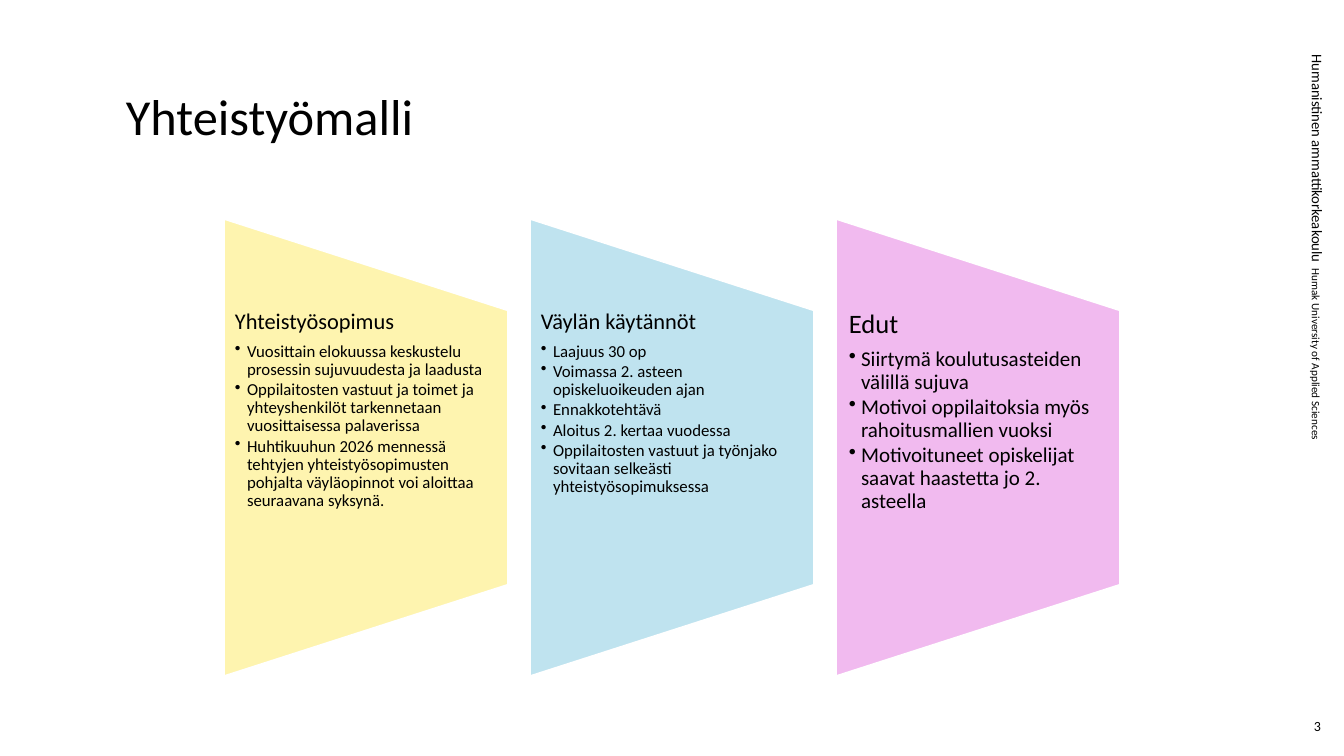
"""Build the Yhteistyömalli slide with three tapered topic panels."""
from lxml import etree
from pptx import Presentation
from pptx.dml.color import RGBColor
from pptx.enum.shapes import MSO_SHAPE
from pptx.enum.text import MSO_ANCHOR, PP_ALIGN
from pptx.oxml.ns import qn
from pptx.util import Inches, Pt

TAPERED = MSO_SHAPE.FLOWCHART_MANUAL_OPERATION
MIDDLE = MSO_ANCHOR.MIDDLE
RIGHT = PP_ALIGN.RIGHT
COLORS = {
    "text": "000000",
    "outline": "FFFFFF",
    "yellow": "FEF4AF",
    "blue": "BFE3EF",
    "pink": "F1BAEF",
}
PANELS = [
    ("Yhteistyösopimus", "yellow", 16, 12, 0.11, [
        "Vuosittain elokuussa keskustelu prosessin sujuvuudesta ja laadusta",
        "Oppilaitosten vastuut ja toimet ja yhteyshenkilöt tarkennetaan "
        "vuosittaisessa palaverissa",
        "Huhtikuuhun 2026 mennessä tehtyjen yhteistyösopimusten pohjalta "
        "väyläopinnot voi aloittaa seuraavana syksynä.",
    ]),
    ("Väylän käytännöt", "blue", 16, 12, 0.11, [
        "Laajuus 30 op",
        "Voimassa 2. asteen opiskeluoikeuden ajan",
        "Ennakkotehtävä",
        "Aloitus 2. kertaa vuodessa",
        "Oppilaitosten vastuut ja työnjako sovitaan selkeästi "
        "yhteistyösopimuksessa",
    ]),
    ("Edut", "pink", 19, 15, 0.13, [
        "Siirtymä koulutusasteiden välillä sujuva",
        "Motivoi oppilaitoksia myös rahoitusmallien vuoksi",
        "Motivoituneet opiskelijat saavat haastetta jo 2. asteella",
    ]),
]
PANEL_LEFT, PANEL_STEP = 2.22, 3.035
PANEL_WIDTH, PANEL_HEIGHT, PANEL_MIDDLE = 2.82, 4.54, 4.44
BODY_HEIGHT = 2.72


def add_text_frame(left, top, width, height):
    box = slide.shapes.add_textbox(Inches(left), Inches(top), Inches(width), Inches(height))
    box.text_frame.word_wrap = True
    return box, box.text_frame


def add_run(paragraph, text, size):
    run = paragraph.add_run()
    run.text = text
    run.font.name = "Calibri"
    run.font.size = Pt(size)
    run.font.color.rgb = RGBColor.from_string(COLORS["text"])


prs = Presentation()
prs.slide_width = Inches(13.33)
prs.slide_height = Inches(7.5)
slide = prs.slides.add_slide(prs.slide_layouts[6])

school_box, school = add_text_frame(10.03, 3.33, 6.06, 0.29)
school_box.rotation = 90
add_run(school.paragraphs[0], "Humanistinen ammattikorkeakoulu ", 10.5)
add_run(school.paragraphs[0], " Humak University of Applied Sciences", 8)

_, title = add_text_frame(1.15, 0.86, 10.39, 0.86)
title.paragraphs[0].line_spacing = 0.9
add_run(title.paragraphs[0], "Yhteistyömalli", 36)

_, page_number = add_text_frame(12.37, 7, 0.83, 0.4)
page_number.vertical_anchor = MIDDLE
page_number.paragraphs[0].alignment = RIGHT
add_run(page_number.paragraphs[0], "3", 10)

for index, (heading, color, heading_size, point_size, inset, points) in enumerate(PANELS):
    left = PANEL_LEFT + index * PANEL_STEP
    panel = slide.shapes.add_shape(
        TAPERED,
        Inches(left + (PANEL_WIDTH - PANEL_HEIGHT) / 2),
        Inches(PANEL_MIDDLE - PANEL_WIDTH / 2),
        Inches(PANEL_HEIGHT),
        Inches(PANEL_WIDTH),
    )
    panel.rotation = 270
    panel.shadow.inherit = False
    panel.fill.solid()
    panel.fill.fore_color.rgb = RGBColor.from_string(COLORS[color])
    panel.line.color.rgb = RGBColor.from_string(COLORS["outline"])
    panel.line.width = Pt(1.5)

    _, body = add_text_frame(left, PANEL_MIDDLE - BODY_HEIGHT / 2, PANEL_WIDTH, BODY_HEIGHT)
    body.margin_left = body.margin_right = Inches(inset)
    body.margin_top = body.margin_bottom = 0
    heading_line = body.paragraphs[0]
    heading_line.line_spacing = 0.9
    heading_line.space_after = Pt(heading_size * 0.35)
    add_run(heading_line, heading, heading_size)

    for point in points:
        point_line = body.add_paragraph()
        point_line.level = 1
        properties = point_line._p.get_or_add_pPr()
        properties.set("marL", str(Inches(0.12)))
        properties.set("indent", str(Inches(-0.12)))
        etree.SubElement(properties, qn("a:buChar")).set("char", "•")
        point_line.line_spacing = 0.9
        point_line.space_after = Pt(point_size * 0.13)
        add_run(point_line, point, point_size)

prs.save("out.pptx")
